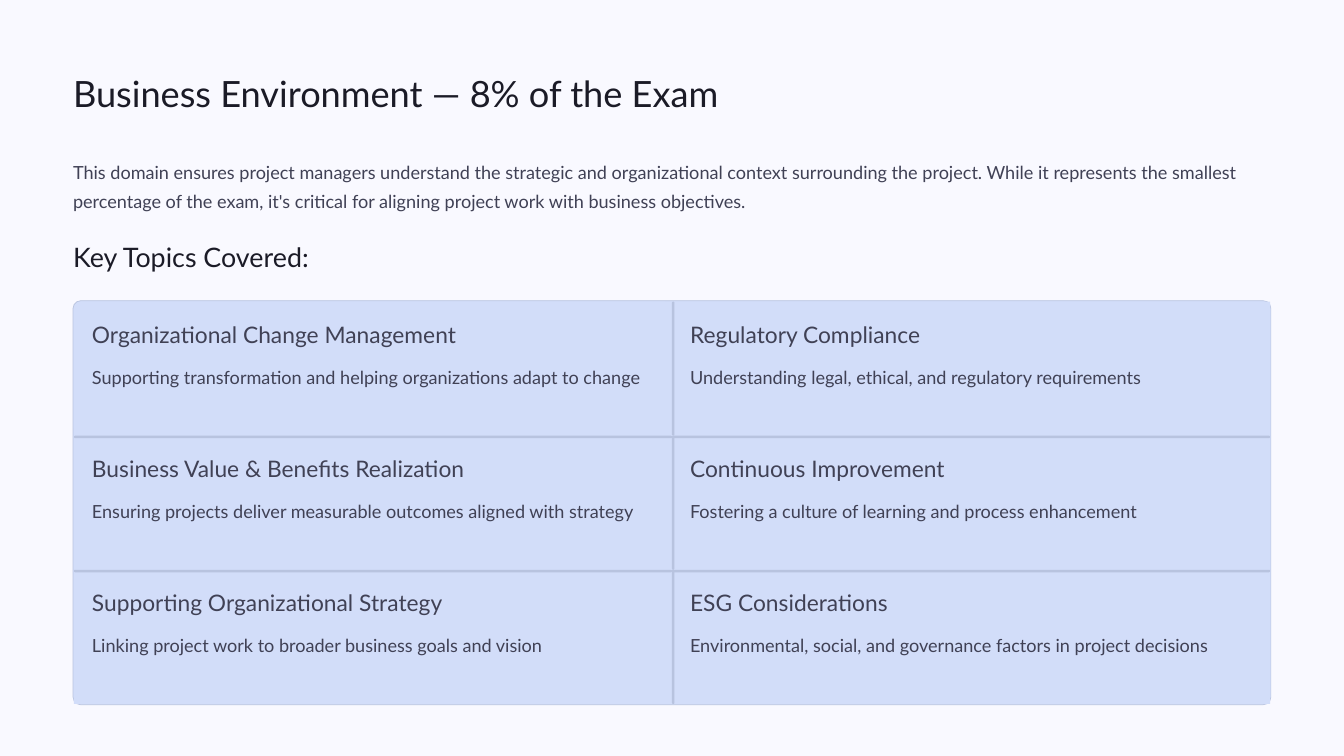
import pptx
import pptx.dml.color
import pptx.enum.shapes
import pptx.util

Inches = pptx.util.Inches
Pt = pptx.util.Pt
RGBColor = pptx.dml.color.RGBColor
Shape = pptx.enum.shapes.MSO_SHAPE

BACKGROUND = RGBColor(0xF9, 0xF9, 0xFF)
HEADING = RGBColor(0x1B, 0x1B, 0x27)
BODY = RGBColor(0x40, 0x41, 0x55)
PANEL = RGBColor(0xD2, 0xDD, 0xF9)
DIVIDER = RGBColor(0xB8, 0xC3, 0xDF)

FONT = "Lato"
LEFT = 0.87
WIDTH = 14.26
COLUMNS = 2
BORDER = 0.01
DIVIDER_SIZE = 0.03

TITLE = "Business Environment — 8% of the Exam"
INTRODUCTION = (
    "This domain ensures project managers understand the strategic and "
    "organizational context surrounding the project. While it represents the "
    "smallest percentage of the exam, it's critical for aligning project work "
    "with business objectives."
)
TOPICS_HEADING = "Key Topics Covered:"
TOPICS = [
    ("Organizational Change Management",
     "Supporting transformation and helping organizations adapt to change"),
    ("Regulatory Compliance",
     "Understanding legal, ethical, and regulatory requirements"),
    ("Business Value & Benefits Realization",
     "Ensuring projects deliver measurable outcomes aligned with strategy"),
    ("Continuous Improvement",
     "Fostering a culture of learning and process enhancement"),
    ("Supporting Organizational Strategy",
     "Linking project work to broader business goals and vision"),
    ("ESG Considerations",
     "Environmental, social, and governance factors in project decisions"),
]


def add_text(slide, box, text, size, line_spacing, color):
    text_box = slide.shapes.add_textbox(*map(Inches, box))
    frame = text_box.text_frame
    frame.margin_left = frame.margin_right = 0
    frame.margin_top = frame.margin_bottom = 0
    frame.word_wrap = True
    frame.text = text
    paragraph = frame.paragraphs[0]
    paragraph.line_spacing = Pt(line_spacing)
    font = paragraph.runs[0].font
    font.name = FONT
    font.size = Pt(size)
    font.color.rgb = color


def add_block(slide, kind, box, fill, rounding=None):
    shape = slide.shapes.add_shape(kind, *map(Inches, box))
    shape.shadow.inherit = False
    shape.fill.solid()
    shape.fill.fore_color.rgb = fill
    shape.line.fill.background()
    if rounding is not None:
        shape.adjustments[0] = rounding
    return shape


def add_header(slide, left, top, width):
    add_text(slide, (left, top, width, 0.54), TITLE, 31, 39, HEADING)
    add_text(slide, (left, top + 1, width, 0.69), INTRODUCTION, 15.5, 25, BODY)
    add_text(slide, (left, top + 2.02, width, 0.41), TOPICS_HEADING, 23, 29, HEADING)


def add_topic(slide, box, row, column, name, description):
    left, top, width, height = box
    if row == column == 0:
        add_block(slide, Shape.ROUNDED_RECTANGLE, box, PANEL, 0.057)
    else:
        add_block(slide, Shape.RECTANGLE, box, PANEL)
    if column > 0:
        add_block(slide, Shape.ROUNDED_RECTANGLE,
                  (left, top, DIVIDER_SIZE, height), DIVIDER, 0.5)
    if row > 0:
        add_block(slide, Shape.ROUNDED_RECTANGLE,
                  (left, top, width, DIVIDER_SIZE), DIVIDER, 0.5)
    text_left = left + 0.215
    text_width = width - 0.43
    add_text(slide, (text_left, top + 0.215, text_width, 0.34), name, 19.5, 24, BODY)
    add_text(slide, (text_left, top + 0.685, text_width, 0.69), description, 15.5, 25, BODY)


def add_topic_grid(slide, left, top, width, height):
    panel = add_block(slide, Shape.ROUNDED_RECTANGLE,
                      (left, top, width, height), PANEL, 0.019)
    panel.line.color.rgb = DIVIDER
    panel.line.width = Pt(0.6)
    rows = len(TOPICS) // COLUMNS
    cell_width = (width - 2 * BORDER) / COLUMNS
    cell_height = (height - 2 * BORDER) / rows
    for index, (name, description) in enumerate(TOPICS):
        row, column = divmod(index, COLUMNS)
        box = (left + BORDER + column * cell_width,
               top + BORDER + row * cell_height,
               cell_width, cell_height)
        add_topic(slide, box, row, column, name, description)


def main():
    presentation = pptx.Presentation()
    presentation.slide_width = Inches(16)
    presentation.slide_height = Inches(9)
    slide = presentation.slides.add_slide(presentation.slide_layouts[6])
    slide.background.fill.solid()
    slide.background.fill.fore_color.rgb = BACKGROUND
    add_header(slide, LEFT, 0.83, WIDTH)
    add_topic_grid(slide, LEFT, 3.58, WIDTH, 4.81)
    presentation.save("out.pptx")


if __name__ == "__main__":
    main()
